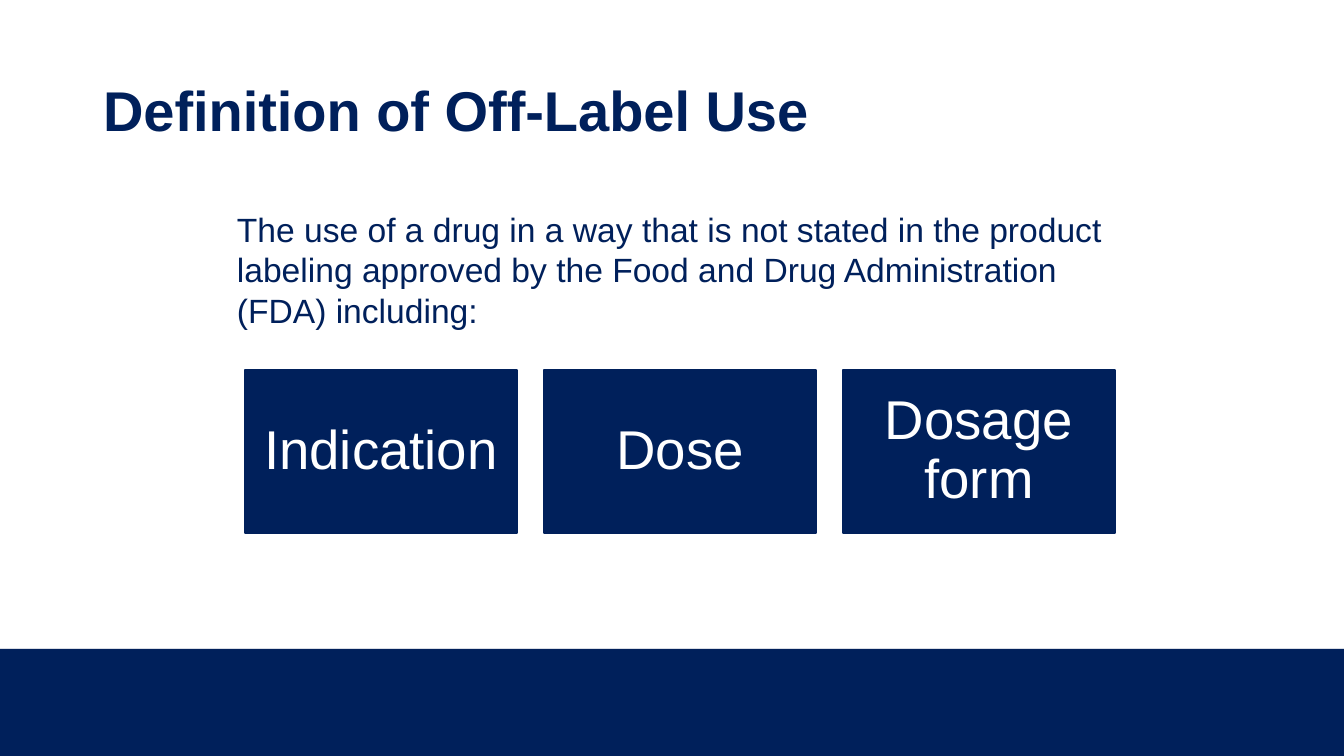
from dataclasses import dataclass

from pptx import Presentation
from pptx.dml.color import RGBColor
from pptx.enum.shapes import MSO_SHAPE
from pptx.enum.text import MSO_ANCHOR, MSO_AUTO_SIZE, PP_ALIGN
from pptx.util import Emu, Pt

RECT = MSO_SHAPE.RECTANGLE
LEFT, CENTER = PP_ALIGN.LEFT, PP_ALIGN.CENTER
TOP, MIDDLE = MSO_ANCHOR.TOP, MSO_ANCHOR.MIDDLE
NO_FIT = MSO_AUTO_SIZE.NONE
TITLE_ONLY = 5
EMU_PER_PX = 914400 / 100.8


def px(n):
    return Emu(round(n * EMU_PER_PX))


@dataclass(frozen=True)
class Theme:
    navy: RGBColor = RGBColor(0x00, 0x20, 0x5B)
    white: RGBColor = RGBColor(0xFF, 0xFF, 0xFF)
    pale: RGBColor = RGBColor(0xF8, 0xF8, 0xF8)
    font: str = "Arial"
    title: int = 40
    body: int = 24
    card: int = 39


class Deck:
    def __init__(self, theme):
        self.theme = theme
        self.prs = Presentation()
        self.prs.slide_width, self.prs.slide_height = px(1344), px(756)
        self.s = self.prs.slides.add_slide(self.prs.slide_layouts[TITLE_ONLY])
        self.s.background.fill.solid()
        self.s.background.fill.fore_color.rgb = theme.white

    def fill_text(self, tf, text, size, color, align=LEFT, anchor=TOP,
                  bold=False, spacing=1.0):
        tf.word_wrap = True
        tf.auto_size = NO_FIT
        tf.vertical_anchor = anchor
        p = tf.paragraphs[0]
        p.alignment = align
        p.line_spacing = spacing
        r = p.add_run()
        r.text = text
        r.font.name = self.theme.font
        r.font.size = Pt(size)
        r.font.bold = bold
        r.font.color.rgb = color

    def title(self, text, x, y, w, h):
        sp = self.s.shapes.title
        sp.left, sp.top, sp.width, sp.height = map(px, (x, y, w, h))
        self.fill_text(sp.text_frame, text, self.theme.title, self.theme.navy,
                       anchor=MIDDLE, bold=True, spacing=0.9)

    def text(self, text, x, y, w, h):
        sp = self.s.shapes.add_textbox(*map(px, (x, y, w, h)))
        self.fill_text(sp.text_frame, text, self.theme.body, self.theme.navy)

    def rect(self, x, y, w, h, color):
        sp = self.s.shapes.add_shape(RECT, *map(px, (x, y, w, h)))
        sp.shadow.inherit = False
        sp.fill.solid()
        sp.fill.fore_color.rgb = color
        sp.line.fill.background()
        return sp

    def card(self, text, x, y, w, h):
        sp = self.rect(x, y, w, h, self.theme.navy)
        sp.line.color.rgb = self.theme.navy
        sp.line.width = Pt(1)
        tf = sp.text_frame
        tf.margin_left = tf.margin_right = px(16)
        tf.margin_top = tf.margin_bottom = px(16)
        self.fill_text(tf, text, self.theme.card, self.theme.white,
                       align=CENTER, anchor=MIDDLE, spacing=0.9)


def main():
    theme = Theme()
    deck = Deck(theme)

    # Footer band with a pale upper edge
    deck.rect(0, 648, 1344, 108, theme.pale)
    deck.rect(0, 649, 1344, 107, theme.navy)

    # Title and definition
    deck.title("Definition of Off-Label Use", 93, 40, 1159, 146)
    deck.text("The use of a drug in a way that is not stated in the product "
              "labeling approved by the Food and Drug Administration (FDA) "
              "including:", 227, 204, 907, 132)

    # Row of off-label categories
    card_w, gap = 272, 27
    for i, name in enumerate(("Indication", "Dose", "Dosage form")):
        deck.card(name, 245 + i * (card_w + gap), 370, card_w, 163)

    deck.prs.save("out.pptx")


if __name__ == "__main__":
    main()
